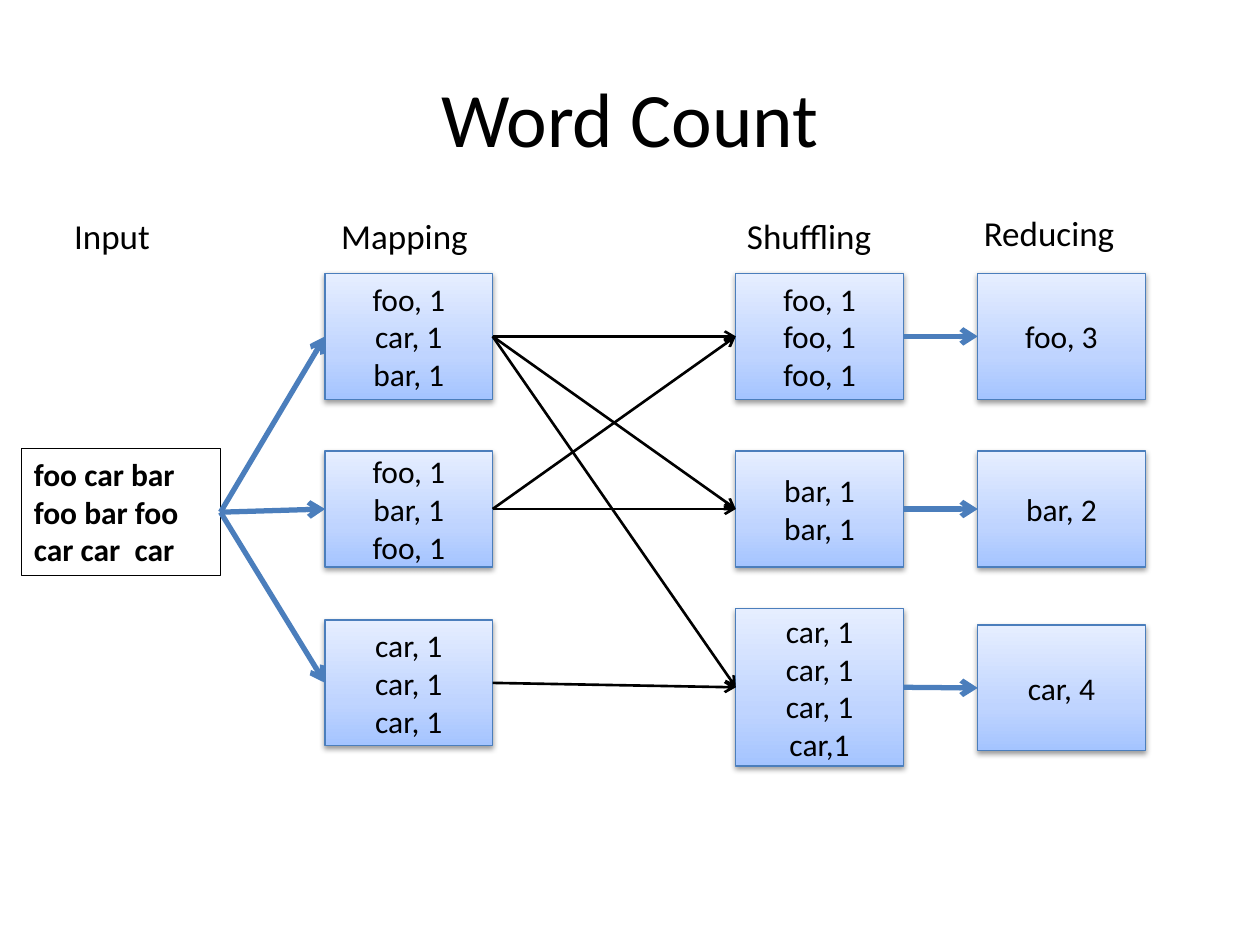
from dataclasses import dataclass

import lxml.etree
import pptx
import pptx.dml.color
import pptx.enum.shapes
import pptx.enum.text
import pptx.oxml
import pptx.oxml.ns
import pptx.util

Inches = pptx.util.Inches
Pt = pptx.util.Pt
RGB = pptx.dml.color.RGBColor.from_string
qn = pptx.oxml.ns.qn
ALIGN = pptx.enum.text.PP_ALIGN
ANCHOR = pptx.enum.text.MSO_ANCHOR
RECTANGLE = pptx.enum.shapes.MSO_SHAPE.RECTANGLE
STRAIGHT = pptx.enum.shapes.MSO_CONNECTOR.STRAIGHT


@dataclass(frozen=True)
class Theme:
    font: str = "Calibri"
    ink: str = "000000"
    accent: str = "4B7EBC"
    gradient: tuple = ((0, "A4C4FF"), (35, "BFD4FF"), (100, "E6EEFF"))
    title_size: int = 44
    heading_size: int = 20
    body_size: int = 18


theme = Theme()
LEFT_SIDE, RIGHT_SIDE = 1, 3
DRAWING = 'xmlns:a="http://schemas.openxmlformats.org/drawingml/2006/main"'
GRADIENT = (
    f'<a:gradFill {DRAWING} rotWithShape="1"><a:gsLst>'
    + "".join(
        f'<a:gs pos="{stop * 1000}"><a:srgbClr val="{color}"/></a:gs>'
        for stop, color in theme.gradient
    )
    + '</a:gsLst><a:lin ang="16200000" scaled="0"/></a:gradFill>'
)
SHADOW = (
    f'<a:outerShdw {DRAWING} blurRad="40000" dist="20000" dir="5400000" rotWithShape="0">'
    '<a:srgbClr val="000000"><a:alpha val="38000"/></a:srgbClr></a:outerShdw>'
)


def write(shape, lines, size, align=ALIGN.LEFT, bold=False):
    shape.text_frame.text = "\n".join(lines)
    for paragraph in shape.text_frame.paragraphs:
        paragraph.alignment = align
        paragraph.font.name = theme.font
        paragraph.font.size = Pt(size)
        paragraph.font.bold = bold
        paragraph.font.color.rgb = RGB(theme.ink)


def add_arrow(source, target, color, width):
    """Run an arrow from the right side of source to the left side of target."""
    arrow = slide.shapes.add_connector(STRAIGHT, 0, 0, 0, 0)
    arrow.begin_connect(source, RIGHT_SIDE)
    arrow.end_connect(target, LEFT_SIDE)
    arrow.line.color.rgb = RGB(color)
    arrow.line.width = Pt(width)
    properties = arrow.element.spPr
    lxml.etree.SubElement(properties.find(qn("a:ln")), qn("a:tailEnd"), type="arrow")
    lxml.etree.SubElement(properties, qn("a:effectLst"))


deck = pptx.Presentation()
deck.slide_width, deck.slide_height = Inches(10), Inches(7.5)
slide = deck.slides.add_slide(deck.slide_layouts[5])

title = slide.shapes.title
title.left, title.top, title.width, title.height = map(Inches, (0.5, 0.3, 9, 1.25))
title.text_frame.vertical_anchor = ANCHOR.MIDDLE
write(title, ["Word Count"], theme.title_size, ALIGN.CENTER)

for heading, left, top, width in (
    ("Input", 0.49, 1.65, 0.91),
    ("Mapping", 2.61, 1.65, 1.38),
    ("Shuffling", 5.83, 1.65, 1.42),
    ("Reducing", 7.71, 1.63, 1.46),
):
    label = slide.shapes.add_textbox(Inches(left), Inches(top), Inches(width), Inches(0.44))
    label.text_frame.word_wrap = False
    write(label, [heading], theme.heading_size)

document = slide.shapes.add_shape(
    RECTANGLE, Inches(0.17), Inches(3.56), Inches(1.58), Inches(1.01)
)
document.shadow.inherit = False
document.fill.background()
document.line.color.rgb = RGB(theme.ink)
document.line.width = Pt(0.5)
document.text_frame.vertical_anchor = ANCHOR.TOP
write(document, ["foo car bar", "foo bar foo", "car car  car"], theme.body_size, bold=True)

# Each stage: left edge, then (top, height, pairs) for every box
stages = {
    "mapping": (2.58, (
        (2.17, 1, ["foo, 1", "car, 1", "bar, 1"]),
        (3.58, 0.92, ["foo, 1", "bar, 1", "foo, 1"]),
        (4.92, 1, ["car, 1"] * 3),
    )),
    "shuffling": (5.84, (
        (2.17, 1, ["foo, 1"] * 3),
        (3.58, 0.92, ["bar, 1"] * 2),
        (4.83, 1.25, ["car, 1"] * 3 + ["car,1"]),
    )),
    "reducing": (7.76, (
        (2.17, 1, ["foo, 3"]),
        (3.58, 0.92, ["bar, 2"]),
        (4.96, 1, ["car, 4"]),
    )),
}
boxes = {}
for stage, (left, rows) in stages.items():
    boxes[stage] = []
    for top, height, pairs in rows:
        box = slide.shapes.add_shape(
            RECTANGLE, Inches(left), Inches(top), Inches(1.33), Inches(height)
        )
        box.line.color.rgb = RGB(theme.accent)
        box.line.width = Pt(0.75)
        box.shadow.inherit = False
        properties = box.element.spPr
        properties.find(qn("a:prstGeom")).addnext(pptx.oxml.parse_xml(GRADIENT))
        properties.find(qn("a:effectLst")).append(pptx.oxml.parse_xml(SHADOW))
        box.text_frame.vertical_anchor = ANCHOR.MIDDLE
        write(box, pairs, theme.body_size, ALIGN.CENTER)
        boxes[stage].append(box)

for mapped in boxes["mapping"]:
    add_arrow(document, mapped, theme.accent, 3)

for source, target in ((0, 0), (0, 1), (0, 2), (1, 0), (1, 1), (2, 2)):
    add_arrow(boxes["mapping"][source], boxes["shuffling"][target], theme.ink, 1.5)

for shuffled, reduced in zip(boxes["shuffling"], boxes["reducing"]):
    add_arrow(shuffled, reduced, theme.accent, 3)

deck.save("out.pptx")
